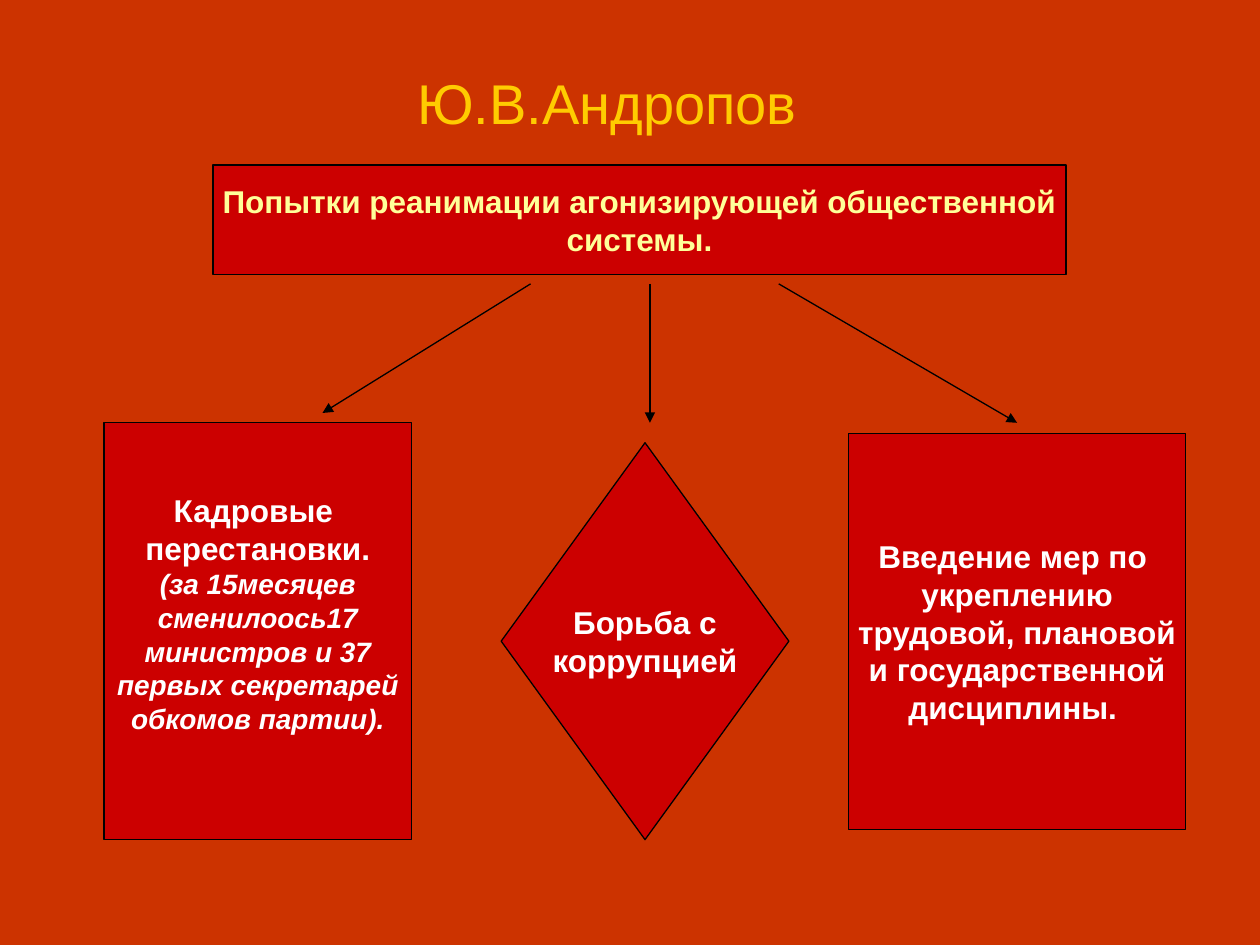
from lxml import etree
from pptx import Presentation
from pptx.dml.color import RGBColor
from pptx.enum import shapes, text
from pptx.oxml.ns import qn
from pptx.util import Pt

BACK = RGBColor(0xCC, 0x33, 0x00)
RED = RGBColor(0xCC, 0x00, 0x00)
GOLD = RGBColor(0xFF, 0xCC, 0x00)
CREAM = RGBColor(0xFF, 0xFF, 0x99)
WHITE = RGBColor(0xFF, 0xFF, 0xFF)
BLACK = RGBColor(0x00, 0x00, 0x00)
FONT = "Arial"
RECT = shapes.MSO_SHAPE.RECTANGLE
GEM = shapes.MSO_SHAPE.DIAMOND

TITLE = "Ю.В.Андропов"

# Shape, (left, top, width, height), colour, bold lines, italic lines, bottom inset
BOXES = [
    (RECT, (121.7, 94.3, 487.5, 62.6), CREAM,
     ["Попытки реанимации агонизирующей общественной", "системы."], [], 3.6),
    (RECT, (59.5, 241.6, 175.7, 238.3), WHITE,
     ["Кадровые ", "перестановки."],
     ["(за 15месяцев", "сменилоось17", "министров и 37",
      "первых секретарей", "обкомов партии)."], 24.3),
    (RECT, (484.8, 247.6, 192.8, 226.6), WHITE,
     ["Введение мер по ", "укреплению", "трудовой, плановой",
      "и государственной", "дисциплины. "], [], 3.6),
    (GEM, (286.4, 253, 164.4, 226.8), WHITE,
     ["Борьба с", " коррупцией "], [], 3.6),
]

# Start x, end x, end y; all arrows start at the same height
START = 162.2
ARROWS = [(303.2, 184.3, 236), (445, 581.2, 241.6), (371.4, 371.4, 241.6)]


def write(frame, lines, color):
    """Fill a frame with centred lines given as (text, size, bold, italic)."""
    frame.word_wrap = False
    frame.text = "\n".join(line[0] for line in lines)
    for para, (_, size, bold, slant) in zip(frame.paragraphs, lines):
        para.alignment = text.PP_ALIGN.CENTER
        for run in para.runs:
            font = run.font
            font.name, font.size = FONT, Pt(size)
            font.bold, font.italic = bold, slant
            font.color.rgb = color


def add_box(slide, kind, place, color, main, extra, inset):
    box = slide.shapes.add_shape(kind, *map(Pt, place))
    box.shadow.inherit = False
    box.fill.solid()
    box.fill.fore_color.rgb = RED
    box.line.color.rgb = BLACK
    box.line.width = Pt(0.75)
    frame = box.text_frame
    frame.vertical_anchor = text.MSO_ANCHOR.MIDDLE
    frame.margin_bottom = Pt(inset)
    lines = [(s, 18, True, False) for s in main]
    lines += [(s, 16, True, True) for s in extra]
    write(frame, lines, color)


def add_arrow(slide, x, end_x, end_y):
    arrow = slide.shapes.add_connector(
        shapes.MSO_CONNECTOR.STRAIGHT, Pt(x), Pt(START), Pt(end_x), Pt(end_y))
    arrow.line.color.rgb = BLACK
    arrow.line.width = Pt(0.75)
    etree.SubElement(arrow.line._get_or_add_ln(), qn("a:tailEnd"), type="triangle")
    etree.SubElement(arrow._element.spPr, qn("a:effectLst"))


def main():
    deck = Presentation()
    deck.slide_width, deck.slide_height = Pt(720), Pt(540)
    slide = deck.slides.add_slide(deck.slide_layouts[6])
    slide.background.fill.solid()
    slide.background.fill.fore_color.rgb = BACK

    # Title
    title = slide.shapes.add_textbox(Pt(167), Pt(35.4), Pt(360), Pt(44))
    write(title.text_frame, [(TITLE, 32, False, False)], GOLD)

    # Boxes, then the arrows between them
    for box in BOXES:
        add_box(slide, *box)
    for arrow in ARROWS:
        add_arrow(slide, *arrow)

    deck.save("out.pptx")


if __name__ == "__main__":
    main()
